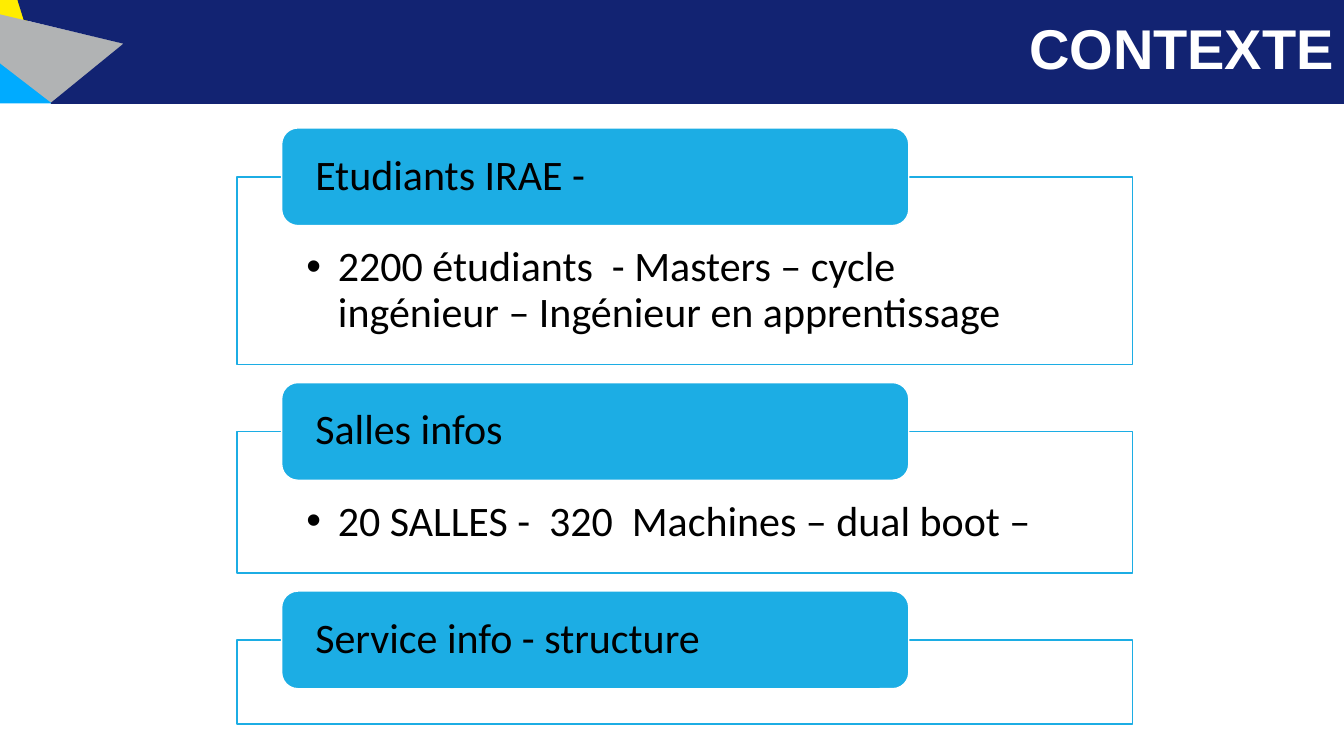
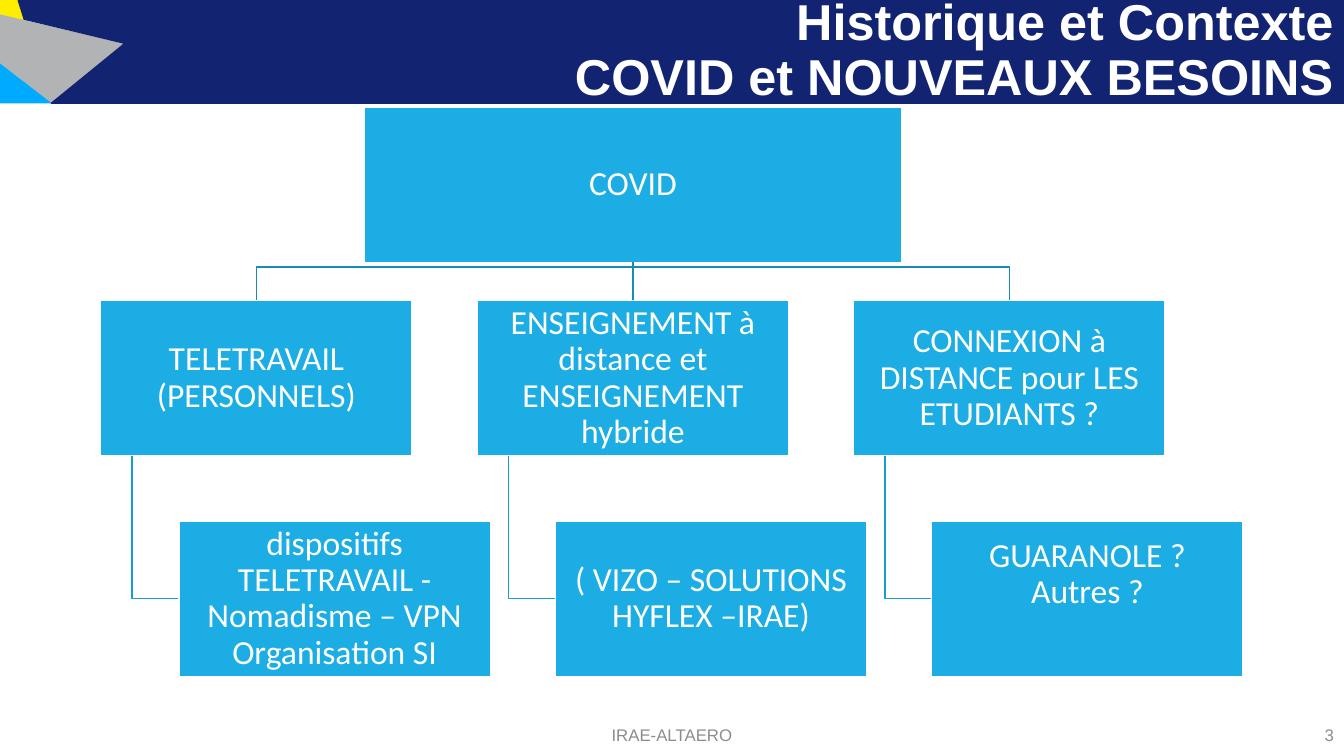
from dataclasses import dataclass
from itertools import chain

from lxml import etree
from pptx import Presentation
from pptx.dml.color import RGBColor
from pptx.enum.shapes import MSO_CONNECTOR, MSO_SHAPE
from pptx.enum.text import MSO_ANCHOR, MSO_AUTO_SIZE, PP_ALIGN
from pptx.oxml.ns import qn
from pptx.util import Pt

RECT, ROUNDED = MSO_SHAPE.RECTANGLE, MSO_SHAPE.ROUNDED_RECTANGLE
STRAIGHT = MSO_CONNECTOR.STRAIGHT
TOP, MIDDLE = MSO_ANCHOR.TOP, MSO_ANCHOR.MIDDLE
LEFT, CENTER, RIGHT = PP_ALIGN.LEFT, PP_ALIGN.CENTER, PP_ALIGN.RIGHT
NO_AUTOFIT = MSO_AUTO_SIZE.NONE

HEAD_FONT, BODY_FONT = "Arial", "Calibri"
WHITE, BLACK, GREY = "FFFFFF", "000000", "8C8C8C"
BLUE, BRANCH, HANG = "1CADE4", "168BB7", "199DCF"
WIDTH, HEIGHT = 960, 540
BAND_H = 73.8


@dataclass
class Outline:
    color: str
    points: list[tuple[float, float]]


@dataclass
class Section:
    label: str
    detail: str
    height: float


@dataclass
class Need:
    title: str
    answer: str
    bottom_inset: float = 1.6


BAND = [
    Outline("FFED00", [(0, 0), (0, 14.4), (20.2, 20.2), (15.8, 0)]),
    Outline("00ABFF", [(0, 43.2), (0, 73.4), (36.7, 73.4)]),
    Outline("B1B3B4", [(0, 10.8), (0, 44.6), (37.4, 73.4), (88.6, 31.7)]),
    Outline("122372", [(36.7, BAND_H), (89.3, 31), (17.3, 13.7), (13, 0),
                       (WIDTH, 0), (WIDTH, BAND_H)]),
]

SECTIONS = [
    Section("Etudiants IRAE -",
            "2200 étudiants  - Masters – cycle ingénieur – Ingénieur en apprentissage", 134),
    Section("Salles infos", "20 SALLES -  320  Machines – dual boot –", 101),
    Section("Service info - structure", "", 60),
]

NEEDS = [
    Need("TELETRAVAIL (PERSONNELS)",
         "dispositifs TELETRAVAIL - Nomadisme – VPN Organisation SI"),
    Need("ENSEIGNEMENT à distance et ENSEIGNEMENT hybride",
         "( VIZO – SOLUTIONS HYFLEX –IRAE)"),
    Need("CONNEXION à DISTANCE pour LES ETUDIANTS ?", "GUARANOLE ? Autres ?", 36),
]


def rgb(color: str) -> RGBColor:
    return RGBColor.from_string(color)


def write(sp, text: str, *, size: float, color: str, font: str = BODY_FONT,
          bold: bool = False, align=LEFT, anchor=MIDDLE, spacing: float = 0.9,
          insets: tuple = (7.2, 3.6, 7.2, 3.6), bullet: float = 0) -> None:
    tf = sp.text_frame
    tf.word_wrap = True
    tf.auto_size = NO_AUTOFIT
    tf.vertical_anchor = anchor
    tf.margin_left, tf.margin_top, tf.margin_right, tf.margin_bottom = map(Pt, insets)
    tf.text = text
    for p in tf.paragraphs:
        p.alignment = align
        p.line_spacing = spacing
        for r in p.runs:
            r.font.name = font
            r.font.size = Pt(size)
            r.font.bold = bold
            r.font.color.rgb = rgb(color)
        if bullet:
            ppr = p._p.get_or_add_pPr()
            ppr.set("marL", str(Pt(bullet)))
            ppr.set("indent", str(-Pt(bullet)))
            etree.SubElement(ppr, qn("a:buFont")).set("typeface", "Arial")
            etree.SubElement(ppr, qn("a:buChar")).set("char", "•")


def add_box(s, x: float, y: float, w: float, h: float, *, kind=RECT,
            fill: str = BLUE, line: str = WHITE):
    sp = s.shapes.add_shape(kind, Pt(x), Pt(y), Pt(w), Pt(h))
    sp.shadow.inherit = False
    sp.fill.solid()
    sp.fill.fore_color.rgb = rgb(fill)
    sp.line.color.rgb = rgb(line)
    sp.line.width = Pt(1)
    return sp


def add_outline(s, outline: Outline, closed: bool = True):
    points = [(Pt(x), Pt(y)) for x, y in outline.points]
    builder = s.shapes.build_freeform(*points[0], scale=1.0)
    builder.add_line_segments(points[1:], close=closed)
    sp = builder.convert_to_shape()
    sp.shadow.inherit = False
    sp.line.color.rgb = rgb(outline.color)
    sp.line.width = Pt(1)
    if closed:
        sp.fill.solid()
        sp.fill.fore_color.rgb = rgb(outline.color)
    else:
        sp.fill.background()
    return sp


def add_note(s, text: str, x: float, w: float, align) -> None:
    sp = s.shapes.add_textbox(Pt(x), Pt(510), Pt(w), Pt(29))
    write(sp, text, size=12, color=GREY, font=HEAD_FONT, align=align, spacing=1.0)


def add_slide(prs, title: str, size: float):
    s = prs.slides.add_slide(prs.slide_layouts[5])
    sp = s.shapes.title
    sp.left, sp.top, sp.width, sp.height = Pt(51.6), Pt(0), Pt(908.4), Pt(BAND_H)
    write(sp, title, size=size, color=WHITE, font=HEAD_FONT, bold=True, align=RIGHT)
    return s


def move_band_to_layout(s) -> None:
    layout = s.slide_layout
    for ph in list(layout.placeholders):
        if ph.placeholder_format.idx:
            ph.element.getparent().remove(ph.element)
    tree = layout.shapes.element
    for i, outline in enumerate(BAND):
        tree.insert(2 + i, add_outline(s, outline).element)


def build_context(prs) -> None:
    s = add_slide(prs, "CONTEXTE", 40)
    move_band_to_layout(s)
    x, y = 169.2, 91.4
    label_h, gap = 69.8, 13
    for section in SECTIONS:
        frame_y = y + label_h / 2
        frame = add_box(s, x, frame_y, 640, section.height, fill=WHITE, line=BLUE)
        if section.detail:
            write(frame, section.detail, size=30, color=BLACK, anchor=TOP,
                  insets=(49.7, 49, 49.7, 16.6), bullet=22.5)
        label = add_box(s, x + 32, y, 448, label_h, kind=ROUNDED)
        write(label, section.label, size=30, color=BLACK, insets=(20.6, 0, 20.6, 0))
        y = frame_y + section.height + gap


def build_needs(prs) -> None:
    s = add_slide(prs, "Historique et Contexte\nCOVID et NOUVEAUX BESOINS", 36)
    add_note(s, "IRAE-ALTAERO", 318, 324, CENTER)
    add_note(s, "3", 744, 216, RIGHT)

    box_w, box_h, root_w = 222.4, 111, 384.4
    root_y, need_y, answer_y = 76.4, 214.6, 372.2
    columns = [72 + 268.9 * i for i in range(len(NEEDS))]
    centers = [x + box_w / 2 for x in columns]
    root_x, root_bottom, bus_y = centers[1], root_y + box_h, 190.8

    branches = [
        Outline(BRANCH, [(root_x, root_bottom), (root_x, bus_y), (cx, bus_y), (cx, need_y)])
        for cx in (centers[0], centers[2])
    ]
    hangs = [
        Outline(HANG, [(x + 22.4, need_y + box_h), (x + 22.4, answer_y + box_h / 2),
                       (x + 55.8, answer_y + box_h / 2)])
        for x in columns
    ]
    for outline in chain(branches, hangs):
        add_outline(s, outline, closed=False)

    def add_node(text: str, x: float, y: float, w: float = box_w, bottom: float = 1.6):
        sp = add_box(s, x, y, w, box_h)
        write(sp, text, size=24, color=WHITE, align=CENTER, insets=(1.6, 1.6, 1.6, bottom))
        return sp

    root = add_node("COVID", root_x - root_w / 2, root_y, root_w)
    nodes = []
    for need, x in zip(NEEDS, columns):
        nodes.append(add_node(need.title, x, need_y))
        add_node(need.answer, x + 55.8, answer_y, bottom=need.bottom_inset)

    trunk = s.shapes.add_connector(STRAIGHT, Pt(root_x), Pt(root_bottom), Pt(root_x), Pt(need_y))
    trunk.begin_connect(root, 2)
    trunk.end_connect(nodes[1], 0)
    trunk.line.color.rgb = rgb(BRANCH)
    trunk.line.width = Pt(1)
    etree.SubElement(trunk.element.spPr, qn("a:effectLst"))


def main() -> None:
    prs = Presentation()
    prs.slide_width, prs.slide_height = Pt(WIDTH), Pt(HEIGHT)
    build_context(prs)
    build_needs(prs)
    prs.save("out.pptx")


if __name__ == "__main__":
    main()
